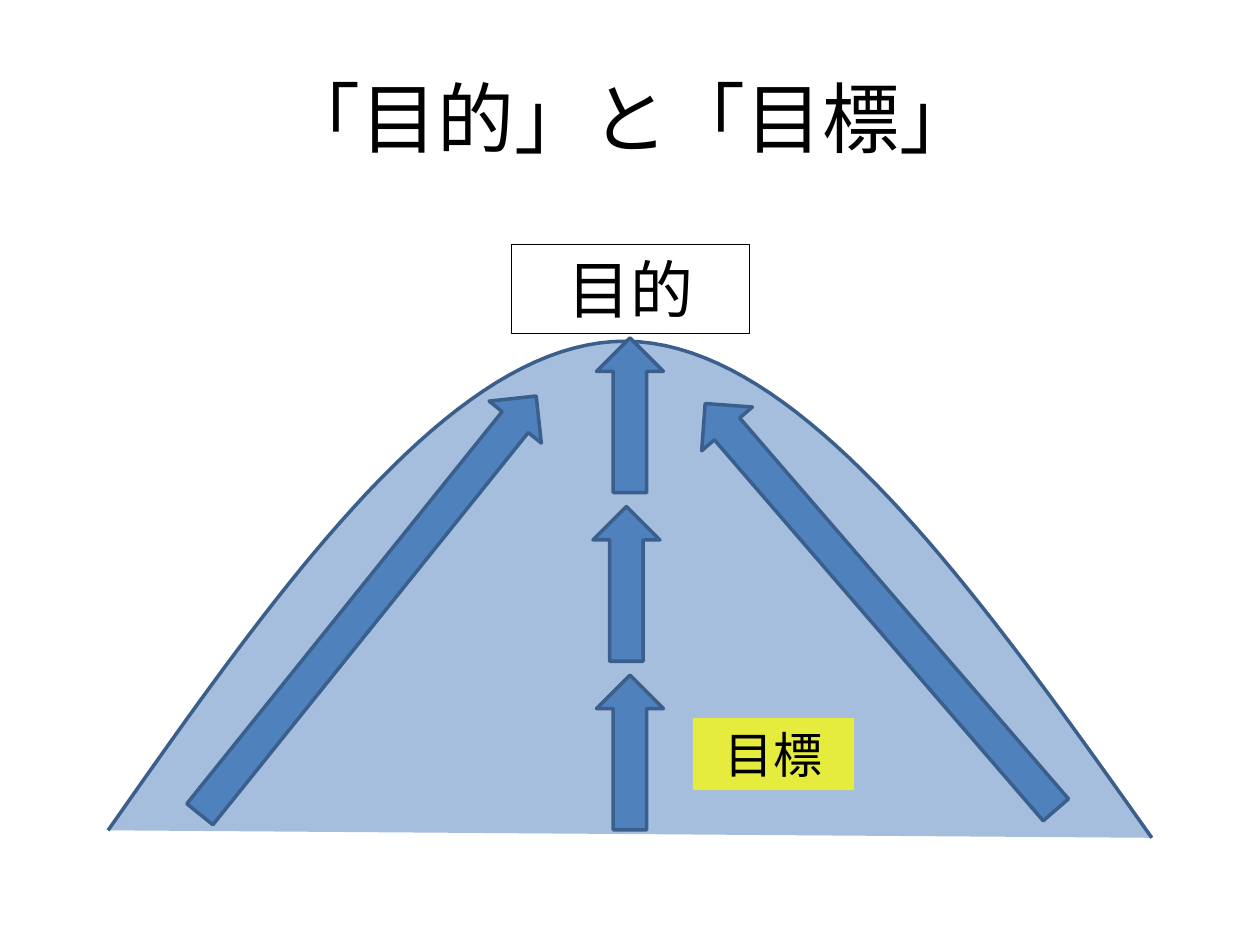
import pptx
import pptx.util
import pptx.dml.color
import pptx.enum.shapes
import pptx.enum.text
import pptx.oxml
import pptx.oxml.ns

Cm = pptx.util.Cm
Pt = pptx.util.Pt
BLUE, EDGE, BLACK, YELLOW = "4F81BD", "3A5F8C", "000000", "FFFF00"


def rgb(code):
    return pptx.dml.color.RGBColor.from_string(code)


def paint(shape, color, alpha=100):
    shape.fill.solid()
    shape.fill.fore_color.rgb = rgb(color)
    if alpha < 100:
        tint = shape.fill._xPr.find(".//" + pptx.oxml.ns.qn("a:srgbClr"))
        tint.append(pptx.oxml.parse_xml(
            f'<a:alpha {pptx.oxml.ns.nsdecls("a")} val="{alpha * 1000}"/>'))


def edge(shape, color, width):
    shape.line.color.rgb = rgb(color)
    shape.line.width = Pt(width)


def add_text(slide, text, size, left, top, width, height, middle=False):
    box = slide.shapes.add_textbox(Cm(left), Cm(top), Cm(width), Cm(height))
    frame = box.text_frame
    frame.word_wrap = True
    if middle:
        frame.vertical_anchor = pptx.enum.text.MSO_ANCHOR.MIDDLE
    frame.text = text
    line = frame.paragraphs[0]
    line.alignment = pptx.enum.text.PP_ALIGN.CENTER
    font = line.runs[0].font
    font.name, font.size, font.color.rgb = "Lato", Pt(size), rgb(BLACK)
    return box


def add_arrow(slide, mid_x, mid_y, length, angle):
    thick = 1.35
    arrow = slide.shapes.add_shape(
        pptx.enum.shapes.MSO_SHAPE.RIGHT_ARROW,
        Cm(mid_x - length / 2), Cm(mid_y - thick / 2), Cm(length), Cm(thick))
    arrow.rotation = angle
    arrow.shadow.inherit = False
    paint(arrow, BLUE)
    edge(arrow, EDGE, 2)


def bezier(knots, steps=40):
    """Points along a cubic curve, after its first knot."""
    for i in range(1, steps + 1):
        t = i / steps
        s = 1 - t
        parts = (s ** 3, 3 * s * s * t, 3 * s * t * t, t ** 3)
        yield tuple(Cm(sum(w * k[axis] for w, k in zip(parts, knots)))
                    for axis in (0, 1))


def add_hill(slide):
    foot, peak, end = (2.18, 16.74), (12.62, 6.88), (23.22, 16.89)
    rise = (foot, (5.64, 11.81), (9.12, 6.86), peak)
    fall = (peak, (16.13, 6.91), (19.69, 11.91), end)
    pen = slide.shapes.build_freeform(Cm(foot[0]), Cm(foot[1]))
    pen.add_line_segments([*bezier(rise), *bezier(fall)], close=False)
    hill = pen.convert_to_shape()
    hill.shadow.inherit = False
    paint(hill, BLUE, 51)
    edge(hill, EDGE, 2)


def main():
    deck = pptx.Presentation()
    deck.slide_width, deck.slide_height = Cm(25.4), Cm(19.05)
    slide = deck.slides.add_slide(deck.slide_layouts[6])

    # Title
    add_text(slide, "「目的」と「目標」", 44, 1.27, 0.76, 22.86, 3.18, middle=True)

    # Hill with the purpose at its top
    add_hill(slide)
    goal = add_text(slide, "目的", 36, 10.31, 4.93, 4.8, 1.8)
    edge(goal, BLACK, 0.75)

    # Long arrows up both slopes
    add_arrow(slide, 7.42, 12.2, 10.82, 308.8)
    add_arrow(slide, 17.75, 12.23, 10.82, 229.2)

    # Steps up the middle
    for step, mid in enumerate((12.7, 12.63, 12.7)):
        add_arrow(slide, mid, 15.17 - 3.4 * step, 3.12, 270)

    # Target beside the first step
    target = add_text(slide, "目標", 28, 13.97, 14.48, 3.25, 1.45)
    paint(target, YELLOW, 72)

    deck.save("out.pptx")


if __name__ == "__main__":
    main()
